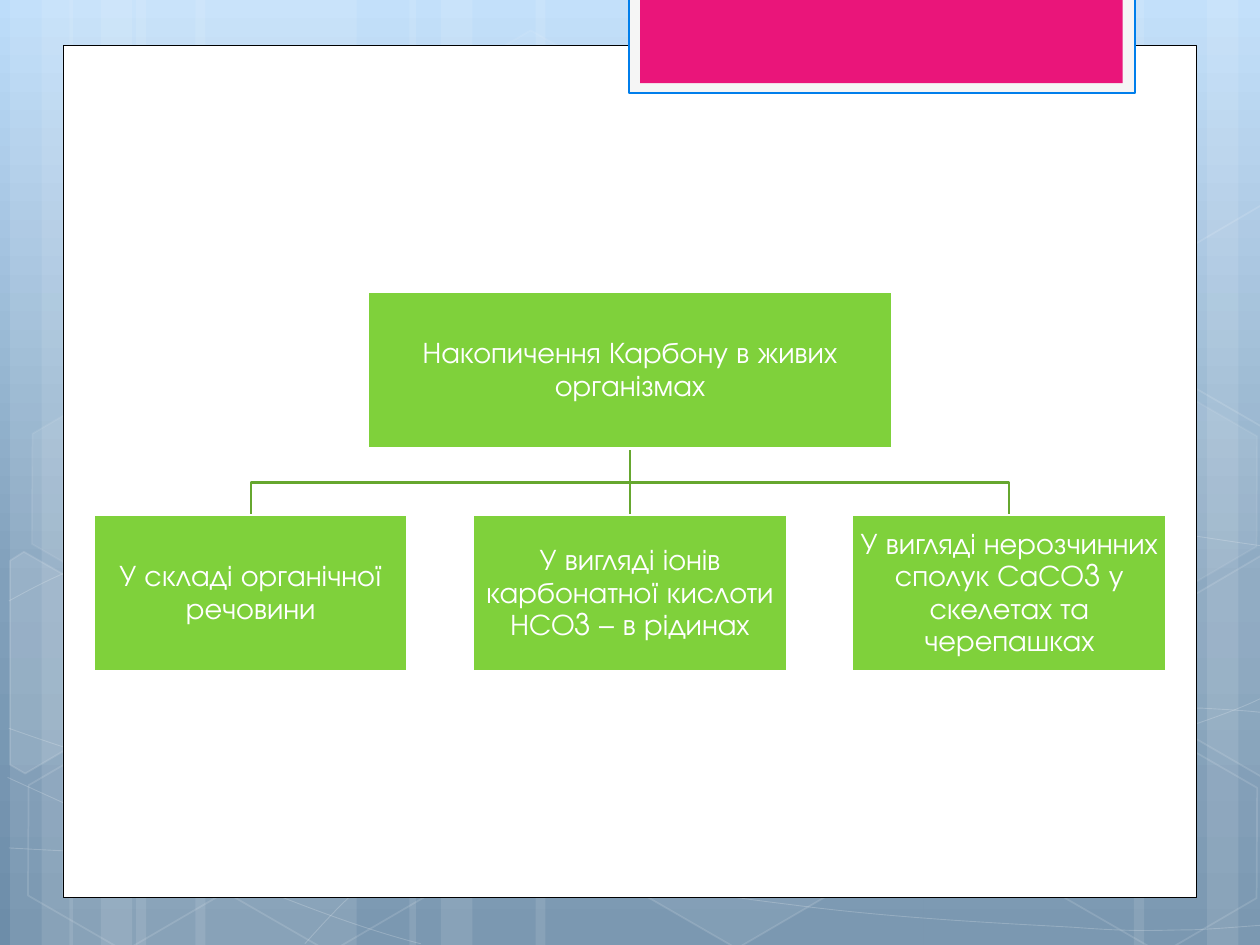
from lxml import etree
from copy import deepcopy
from pptx import Presentation
from pptx.dml.color import RGBColor
from pptx.enum.shapes import MSO_CONNECTOR, MSO_SHAPE
from pptx.enum.text import MSO_ANCHOR, PP_ALIGN
from pptx.oxml.ns import qn
from pptx.util import Inches, Pt

RECT, HEXAGON = MSO_SHAPE.RECTANGLE, MSO_SHAPE.HEXAGON
STRAIGHT = MSO_CONNECTOR.STRAIGHT
MIDDLE, CENTER = MSO_ANCHOR.MIDDLE, PP_ALIGN.CENTER

WHITE = RGBColor(0xFF, 0xFF, 0xFF)
BLACK = RGBColor(0x00, 0x00, 0x00)
PALE = RGBColor(0xF5, 0xF5, 0xF5)
BLUE = RGBColor(0x00, 0x7E, 0xEB)
PINK = RGBColor(0xEA, 0x15, 0x7A)
GREEN = RGBColor(0x7F, 0xD1, 0x3B)
DARK_GREEN = RGBColor(0x66, 0xA7, 0x2F)
SKY = [(0, RGBColor(0xBD, 0xDD, 0xFA)), (0.62, RGBColor(0x81, 0xA0, 0xBB)),
       (1, RGBColor(0x6D, 0x8D, 0xA9))]

COLS, ROWS = 10, 7.5  # grid cells of one inch
HEX_W, HEX_H = 1.75, 1.52


class Deck:
    """Style and current slide; every length is in grid columns and rows."""
    font, size = "TeX Gyre Adventor", Pt(17)

    def __init__(self):
        self.prs = Presentation()
        self.prs.slide_width, self.prs.slide_height = Inches(COLS), Inches(ROWS)
        self.s = self.prs.slides.add_slide(self.prs.slide_layouts[6])

    def background(self, stops):
        fill = self.s.background.fill
        fill.gradient()
        fill.gradient_angle = 270
        gs_list = self.s.element.find(".//" + qn("a:gsLst"))
        gs_list.append(deepcopy(gs_list[0]))
        for stop, (position, color) in zip(fill.gradient_stops, stops):
            stop.position, stop.color.rgb = position, color

    def fade(self, sp, tag, percent):
        """Set the opacity of the fill or line colour found at tag."""
        for color in sp.element.spPr.findall(tag + "/" + qn("a:srgbClr")):
            etree.SubElement(color, qn("a:alpha"), val=str(percent * 1000))

    def paint(self, sp, fill=None, line=None, width=1, fill_alpha=100, line_alpha=100):
        sp.shadow.inherit = False
        if fill is None:
            sp.fill.background()
        else:
            sp.fill.solid()
            sp.fill.fore_color.rgb = fill
        if line is None:
            sp.line.fill.background()
        else:
            sp.line.color.rgb, sp.line.width = line, Pt(width)
        solid = qn("a:solidFill")
        if fill_alpha < 100:
            self.fade(sp, solid, fill_alpha)
        if line_alpha < 100:
            self.fade(sp, qn("a:ln") + "/" + solid, line_alpha)
        return sp

    def shape(self, kind, x, y, w, h, **style):
        sp = self.s.shapes.add_shape(kind, *map(Inches, (x, y, w, h)))
        return self.paint(sp, **style)

    def hexagon(self, x, y, fill_alpha, line_alpha):
        sp = self.shape(HEXAGON, x, y, HEX_W, HEX_H, fill=WHITE if fill_alpha else None,
                        line=WHITE, fill_alpha=fill_alpha or 100, line_alpha=line_alpha)
        sp.adjustments[0], sp.adjustments[1] = 0.285, 1.1547
        sp.rotation = 30

    def outline(self, points, close=False, **style):
        start, *rest = [(Inches(x), Inches(y)) for x, y in points]
        fb = self.s.shapes.build_freeform(*start)
        fb.add_line_segments(rest, close=close)
        return self.paint(fb.convert_to_shape(), **style)

    def curve(self, points):
        """Draw joined cubic curves: a start, then three points for each curve."""
        sp = self.outline(points, line=WHITE, width=0.5, line_alpha=20)
        track = sp.element.spPr.find(".//" + qn("a:path"))
        segments = track.findall(qn("a:lnTo"))
        for i in range(0, len(segments), 3):
            bezier = etree.SubElement(track, qn("a:cubicBezTo"))
            for segment in segments[i:i + 3]:
                bezier.append(segment[0])
                track.remove(segment)

    def connector(self, x1, y1, x2, y2):
        c = self.s.shapes.add_connector(STRAIGHT, *map(Inches, (x1, y1, x2, y2)))
        c.line.color.rgb, c.line.width = DARK_GREEN, Pt(1.25)
        etree.SubElement(c.element.spPr, qn("a:effectLst"))

    def box(self, x, y, w, h, text):
        sp = self.shape(RECT, x, y, w, h, fill=GREEN, line=WHITE, width=1.25)
        tf = sp.text_frame
        tf.word_wrap, tf.vertical_anchor = True, MIDDLE
        tf.margin_left = tf.margin_right = tf.margin_top = tf.margin_bottom = Inches(0.01)
        p = tf.paragraphs[0]
        p.text, p.alignment, p.line_spacing = text, CENTER, 0.9
        p.font.name, p.font.size, p.font.color.rgb = self.font, self.size, WHITE


def backdrop(d):
    d.background(SKY)

    # Vertical light bands
    bands = [(9.58, 0.5), (9, 0.83), (7.33, 1.75)]
    for x, wide in ((0.08, 1.75), (0.55, 1.75), (3.25, 3.08)):
        bands += [(x + 1, wide), (x, 0.5), (x + 0.25, 0.83)]
    for x, w in bands:
        d.shape(RECT, x, 0, w, ROWS, fill=WHITE, fill_alpha=10)

    # Thin sweeping curves
    for points in (
        [(0.07, 6.73), (0.61, 6.76), (1.15, 6.79), (1.9, 6.78), (2.65, 6.77), (3.58, 6.75),
         (4.58, 6.65), (5.58, 6.55), (7, 6.36), (7.92, 6.17), (8.83, 5.98), (9.77, 5.68),
         (10.07, 5.51)],
        [(0.07, 4.77), (0.36, 4.61), (0.65, 4.46), (1.21, 4.31), (1.78, 4.16), (2.59, 3.94),
         (3.47, 3.87), (4.36, 3.8), (5.44, 3.79), (6.54, 3.87), (7.64, 3.95), (9.47, 4.26),
         (10.07, 4.34)],
        [(0.06, 6.17), (1.27, 6.72), (2.47, 7.27), (3.34, 7.49)],
        [(0.07, 5.78), (0.38, 5.89), (0.7, 6), (1.28, 6.16), (1.86, 6.31), (2.73, 6.56),
         (3.57, 6.73), (4.4, 6.9), (5.45, 7.08), (6.28, 7.18), (7.11, 7.29), (8, 7.33),
         (8.53, 7.36), (9.05, 7.4), (9.19, 7.38), (9.45, 7.38), (9.71, 7.37), (9.89, 7.35),
         (10.07, 7.34)],
        [(2.42, 7.49), (2.6, 7.29), (2.78, 7.09), (3.02, 6.91), (3.26, 6.73), (3.6, 6.53),
         (3.88, 6.39), (4.16, 6.25), (4.33, 6.19), (4.7, 6.09), (5.06, 5.99), (5.73, 5.85),
         (6.08, 5.78), (6.44, 5.71), (6.49, 5.71), (6.8, 5.69), (7.11, 5.66), (7.6, 5.63),
         (7.94, 5.62), (8.29, 5.61), (8.86, 5.62), (8.86, 5.62), (9.08, 5.62), (9.31, 5.62),
         (9.53, 5.62), (9.71, 5.63), (9.88, 5.64), (9.97, 5.65), (10.06, 5.66),
         (10.03, 5.65), (10.06, 5.66)],
    ):
        d.curve(points)

    # Honeycomb: position, fill opacity, line opacity
    for cell in ((3.34, 0.36, 4, 8), (4.97, 5.89, 6, 12), (0.11, 5.91, 0, 12),
                 (0.14, 3.12, 7, 8), (1.74, 5.92, 0, 12), (7.53, 4.53, 10, 12),
                 (8.34, 5.93, 0, 12), (8.34, 3.14, 7, 8)):
        d.hexagon(*cell)

    # Cells cut by the slide edges
    left = [(0.08, 4.45), (0.19, 4.38), (0.96, 4.82), (0.95, 5.7), (0.2, 6.14), (0.08, 6.07)]
    right = [(9.26, 4.85), (10.01, 4.41), (10.09, 4.46), (10.09, 6.13), (10.02, 6.17),
             (9.26, 5.73)]
    upper = [(x, y - 2.78) for x, y in right]
    for points, fill, alpha in ((left, WHITE, 10), (right, WHITE, 4), (upper, None, 100)):
        d.outline(points, close=True, fill=fill, fill_alpha=alpha, line=WHITE, line_alpha=12)

    # White panel and pink tab
    d.shape(RECT, 0.5, 0.36, 9, 6.76, fill=WHITE, line=BLACK, width=0.5)
    d.shape(RECT, 4.99, -0.02, 4.02, 0.76, fill=PALE, line=BLUE, width=1.25)
    d.shape(RECT, 5.08, -0.02, 3.83, 0.68, fill=PINK)


def hierarchy(d):
    mid, pitch = COLS / 2, 3.01
    root_w, leaf_w, box_h = 4.16, 2.49, 1.24
    root_y, leaf_y, stem_y, bar_y = 2.32, 4.09, 3.57, 3.83

    # Branches
    for x in (mid + pitch, mid - pitch):
        d.outline([(mid, stem_y), (mid, bar_y), (x, bar_y), (x, leaf_y)],
                  line=DARK_GREEN, width=1.25)
    d.connector(mid, stem_y, mid, leaf_y)

    # Root and its three forms
    d.box(mid - root_w / 2, root_y, root_w, box_h, "Накопичення Карбону в живих організмах")
    leaves = ["У складі органічної речовини",
              "У вигляді іонів карбонатної кислоти НСО3 – в рідинах",
              "У вигляді нерозчинних сполук СаСО3 у скелетах та черепашках"]
    for i, text in enumerate(leaves):
        d.box(mid + (i - 1) * pitch - leaf_w / 2, leaf_y, leaf_w, box_h, text)


def main():
    d = Deck()
    backdrop(d)
    hierarchy(d)
    d.prs.save("out.pptx")


if __name__ == "__main__":
    main()
